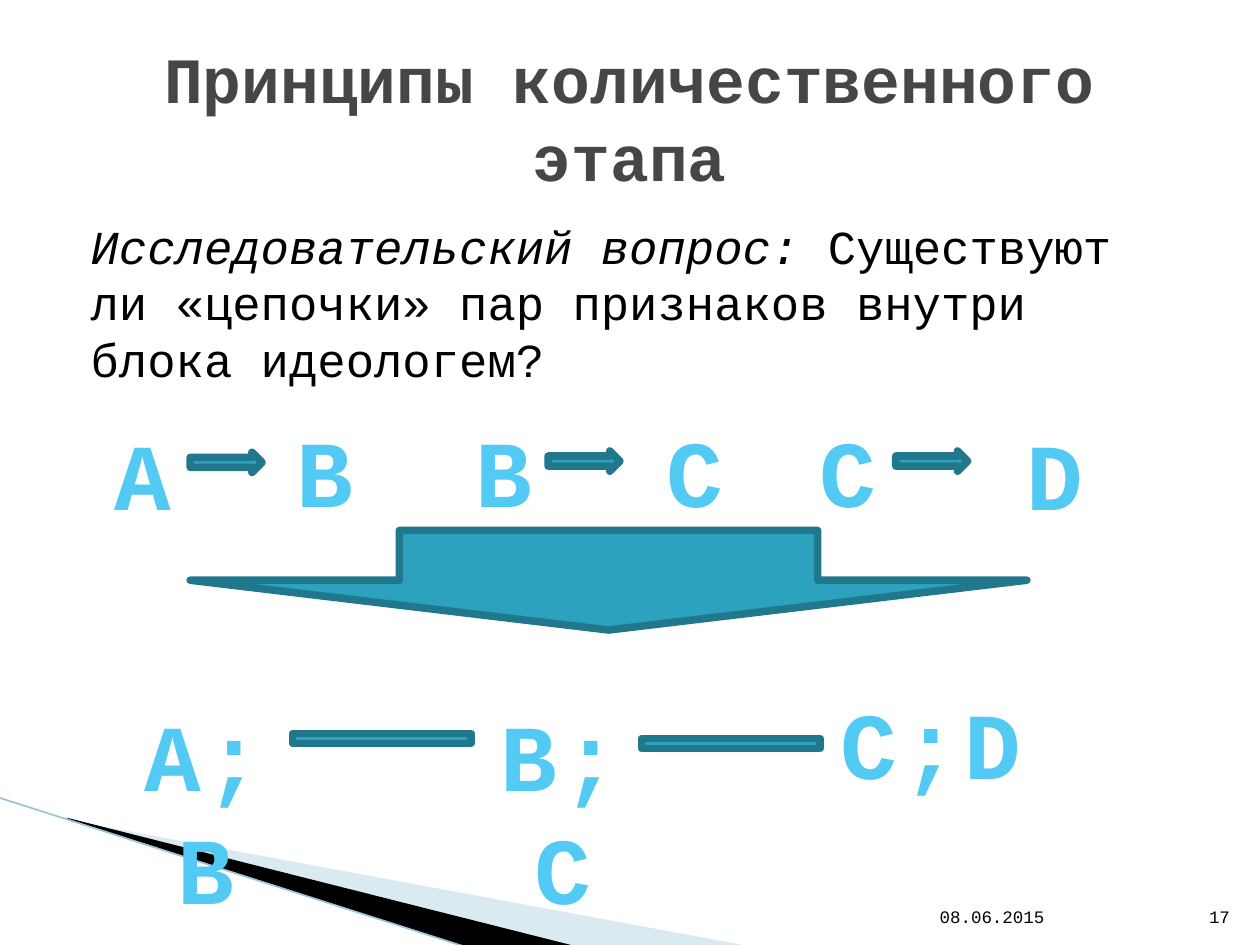
from lxml.etree import SubElement
from pptx import Presentation
from pptx.dml.color import RGBColor
from pptx.enum.shapes import MSO_CONNECTOR, MSO_SHAPE
from pptx.enum.text import MSO_ANCHOR, PP_ALIGN
from pptx.oxml import parse_xml
from pptx.oxml.ns import nsdecls, qn
from pptx.util import Inches, Pt

COLORS = {
    "black": "000000",
    "title": "464646",
    "pale": "A0CBDC",
    "edge": "97C5D8",
    "teal": "2DA2BF",
    "teal_dark": "21788D",
    "letter_top": "52CAF4",
    "letter_bottom": "0688A8",
    "letter_outline": "F4F8FA",
}
FONT = "Courier New"


def add_text(left, top, width, height, runs, size, color="black", bold=False,
             align=PP_ALIGN.LEFT, anchor=MSO_ANCHOR.TOP, wrap=True):
    box = slide.shapes.add_textbox(Inches(left), Inches(top), Inches(width), Inches(height))
    frame = box.text_frame
    frame.word_wrap = wrap
    frame.vertical_anchor = anchor
    paragraph = frame.paragraphs[0]
    paragraph.alignment = align
    for text, italic in runs:
        run = paragraph.add_run()
        run.text = text
        run.font.color.rgb = RGBColor.from_string(COLORS[color])
        formats = {"name": FONT, "size": Pt(size), "bold": bold, "italic": italic}
        for name, value in formats.items():
            setattr(run.font, name, value)
    return box


def add_block(kind, left, top, width, height):
    shape = slide.shapes.add_shape(kind, Inches(left), Inches(top), Inches(width), Inches(height))
    shape.shadow.inherit = False
    shape.fill.solid()
    shape.fill.fore_color.rgb = RGBColor.from_string(COLORS["teal"])
    shape.line.color.rgb = RGBColor.from_string(COLORS["teal_dark"])
    shape.line.width = Pt(4.33)


presentation = Presentation()
presentation.slide_width = Inches(10)
presentation.slide_height = Inches(7.5)
slide = presentation.slides.add_slide(presentation.slide_layouts[6])

wedges = [
    ("pale", 40, [(0.55, 6.51), (5.95, 7.51), (4.56, 7.51), (0.55, 6.5)]),
    ("black", 100, [(0.53, 6.49), (4.57, 7.51), (3.72, 7.52), (0.54, 6.5)]),
]
for color, opacity, points in wedges:
    corners = [(Inches(x), Inches(y)) for x, y in points]
    builder = slide.shapes.build_freeform(*corners[0])
    builder.add_line_segments(corners[1:], close=True)
    wedge = builder.convert_to_shape()
    wedge.shadow.inherit = False
    wedge.fill.solid()
    wedge.fill.fore_color.rgb = RGBColor.from_string(COLORS[color])
    wedge.line.fill.background()
    if opacity < 100:
        color_element = wedge.fill._xPr.find(qn("a:solidFill"))[0]
        SubElement(color_element, qn("a:alpha"), val=str(opacity * 1000))

edge = slide.shapes.add_connector(
    MSO_CONNECTOR.STRAIGHT, Inches(-0.01), Inches(6.33), Inches(3.71), Inches(7.52))
edge.line.color.rgb = RGBColor.from_string(COLORS["teal_dark"])
edge.line.color.rgb = RGBColor.from_string(COLORS["edge"])
edge.line.width = Pt(0.95)
SubElement(edge._element.spPr, qn("a:effectLst"))

question = add_text(0.5, 1.62, 9, 4.95, [
    ("Исследовательский вопрос: ", True),
    ("Существуют ли «цепочки» пар признаков внутри блока идеологем?", False),
], 27)
question.text_frame.margin_top = Inches(0.1)
question.text_frame.margin_left = Inches(0.22)

add_text(7.36, 7.01, 2.1, 0.4, [("08.06.2015", False)], 10, anchor=MSO_ANCHOR.BOTTOM)
add_text(9.46, 7.01, 0.4, 0.4, [("17", False)], 10,
         align=PP_ALIGN.RIGHT, anchor=MSO_ANCHOR.BOTTOM)
add_text(0.5, 0.3, 9, 1.25, [("Принципы количественного этапа", False)], 36.9,
         color="title", bold=True, align=PP_ALIGN.CENTER, anchor=MSO_ANCHOR.MIDDLE)

letters = [
    ("А", 0.75, 3.25, 0.77, False),
    ("В", 2.24, 3.23, 0.68, False),
    ("В", 3.66, 3.23, 0.68, False),
    ("С", 5.13, 3.23, 0.77, False),
    ("С", 6.34, 3.23, 0.77, False),
    ("D", 7.97, 3.25, 0.81, False),
    ("A;B", 0.87, 5.48, 1.53, True),
    ("B;C", 3.7, 5.48, 1.53, True),
    ("C;D", 6.56, 5.39, 1.66, False),
]
for text, left, top, width, wrap in letters:
    box = add_text(left, top, width, 1.01, [(text, False)], 54, color="letter_top",
                   bold=True, align=PP_ALIGN.CENTER, wrap=wrap)
    font = box.text_frame.paragraphs[0].runs[0].font
    font.fill.gradient()
    font.fill.gradient_angle = 270
    stops = [("letter_top", 0.1), ("letter_bottom", 0.75)]
    for stop, (color, position) in zip(font.fill.gradient_stops, stops):
        stop.color.rgb = RGBColor.from_string(COLORS[color])
        stop.position = position
    font._element.set("spc", "300")
    font._element.insert(0, parse_xml(
        f'<a:ln {nsdecls("a")} w="11430"><a:solidFill>'
        f'<a:srgbClr val="{COLORS["letter_outline"]}"/></a:solidFill></a:ln>'))

for left, top in [(1.51, 3.59), (4.35, 3.58), (7.11, 3.58)]:
    add_block(MSO_SHAPE.RIGHT_ARROW, left, top, 0.57, 0.16)
add_block(MSO_SHAPE.DOWN_ARROW, 1.51, 4.21, 6.64, 0.79)
for left, top in [(2.32, 5.82), (5.09, 5.86)]:
    add_block(MSO_SHAPE.RECTANGLE, left, top, 1.42, 0.08)

presentation.save("out.pptx")
